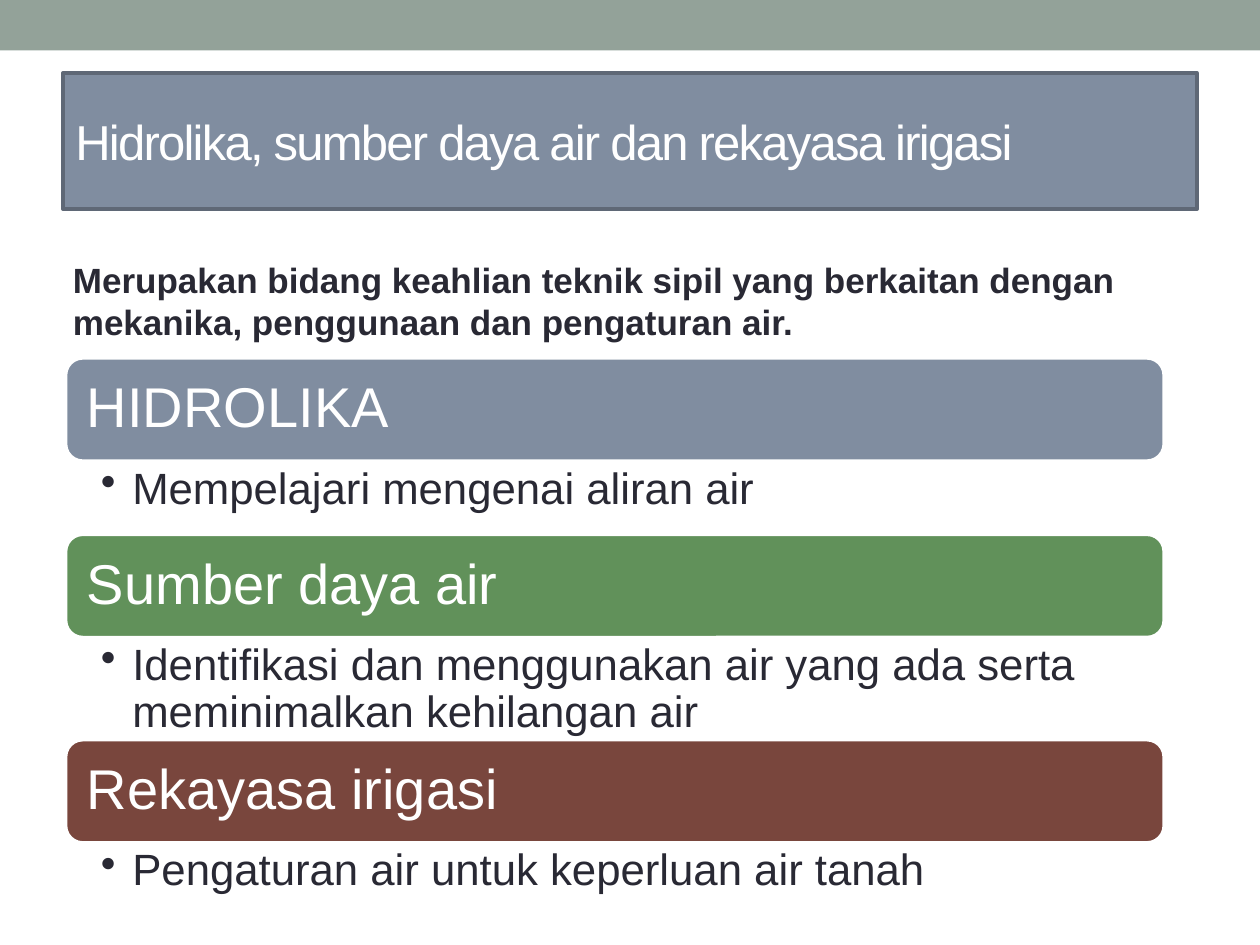
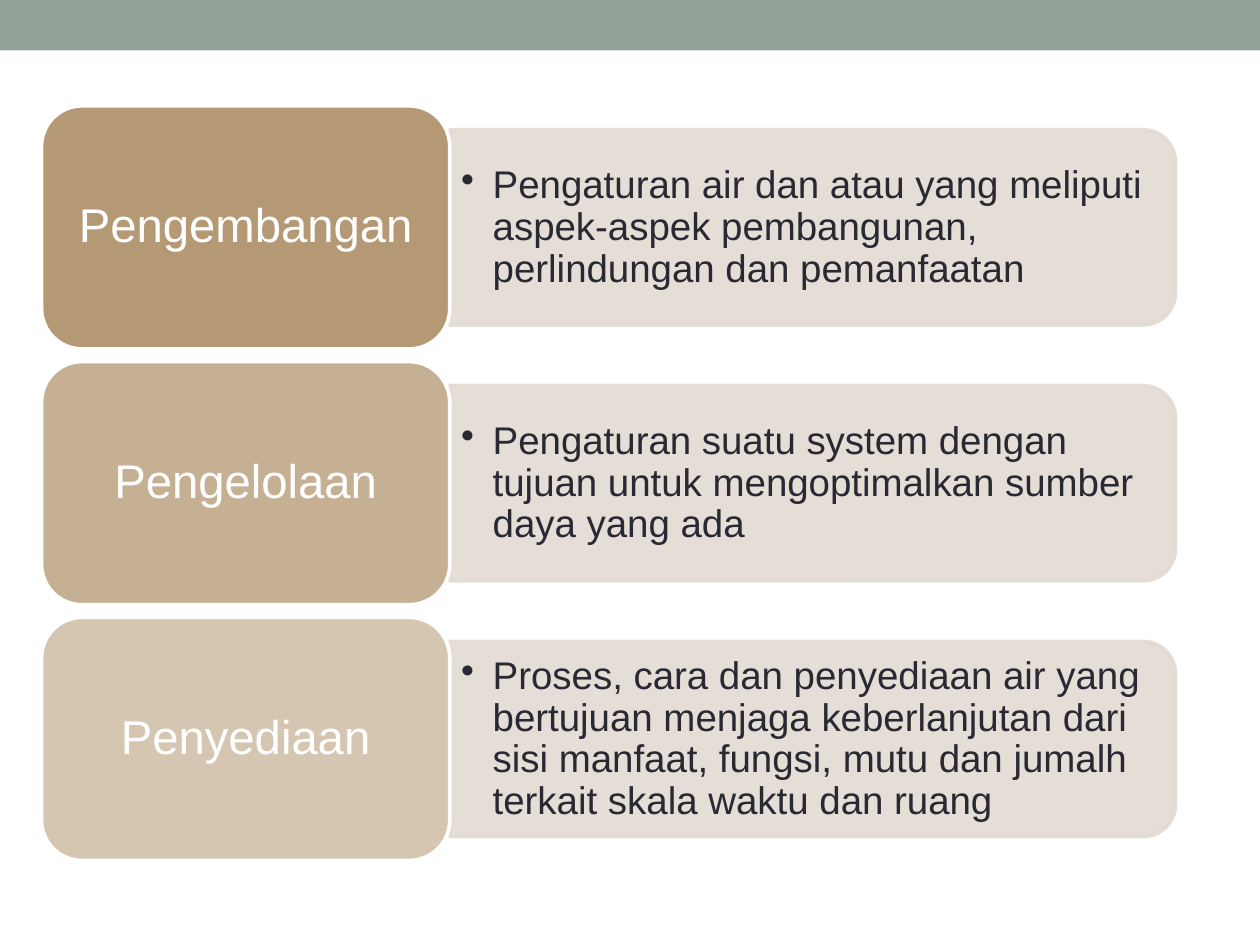
"""Builds two slides on hydraulics, water resources and irrigation engineering."""
import pptx
import pptx.dml.color
import pptx.enum.shapes
import pptx.enum.text
import pptx.oxml
import pptx.oxml.ns
import pptx.util
from lxml import etree

RGBColor = pptx.dml.color.RGBColor
SHAPE = pptx.enum.shapes.MSO_SHAPE
ANCHOR = pptx.enum.text.MSO_ANCHOR
ALIGN = pptx.enum.text.PP_ALIGN

WHITE = RGBColor(0xFF, 0xFF, 0xFF)
INK = RGBColor(0x29, 0x29, 0x34)
SAGE = RGBColor(0x93, 0xA2, 0x99)
SLATE = RGBColor(0x80, 0x8D, 0xA0)
SLATE_EDGE = RGBColor(0x5F, 0x68, 0x76)
GREEN = RGBColor(0x61, 0x91, 0x5A)
BROWN = RGBColor(0x79, 0x46, 0x3D)
TAN = RGBColor(0xAD, 0x8F, 0x67)
SAND = RGBColor(0xE3, 0xDB, 0xD3)

FIELDS = [
    ("HIDROLIKA", SLATE, "Mempelajari mengenai aliran air", 58),
    ("Sumber daya air", GREEN,
     "Identifikasi dan menggunakan air yang ada serta meminimalkan kehilangan air", 81),
    ("Rekayasa irigasi", BROWN, "Pengaturan air untuk keperluan air tanah", 58),
]
ACTIVITIES = [
    ("Pengembangan", 90,
     "Pengaturan air dan atau yang meliputi aspek-aspek pembangunan, "
     "perlindungan dan pemanfaatan"),
    ("Pengelolaan", 70,
     "Pengaturan suatu system dengan tujuan untuk mengoptimalkan sumber daya yang ada"),
    ("Penyediaan", 50,
     "Proses, cara dan penyediaan air yang bertujuan menjaga keberlanjutan dari "
     "sisi manfaat, fungsi, mutu dan jumalh terkait skala waktu dan ruang"),
]


def px(length):
    """Turn px into EMU, at 100 px to the inch."""
    return pptx.util.Emu(int(length * 9144))


def set_opacity(fill, percent):
    """Make a solid fill partly transparent."""
    color = fill._xPr.find(".//" + pptx.oxml.ns.qn("a:srgbClr"))
    etree.SubElement(color, pptx.oxml.ns.qn("a:alpha"), val=str(percent * 1000))


class SlideBuilder:
    """Holds the deck style and draws on the current page."""

    font_name = "Arial"
    line_width = pptx.util.Pt(2.08)

    def __init__(self):
        """Start an empty deck of 10 by 7.5 inches."""
        self.deck = pptx.Presentation()
        self.deck.slide_width, self.deck.slide_height = px(1000), px(750)
        self.page = None

    def new_page(self):
        """Add a blank page with the band along its top."""
        self.page = self.deck.slides.add_slide(self.deck.slide_layouts[6])
        self.shape(SHAPE.RECTANGLE, 0, 0, 1000, 40, SAGE)

    def shape(self, kind, left, top, width, height, color, edge=None, opacity=100):
        """Draw a filled preset shape."""
        box = self.page.shapes.add_shape(kind, px(left), px(top), px(width), px(height))
        box.shadow.inherit = False
        box.fill.solid()
        box.fill.fore_color.rgb = color
        if opacity < 100:
            set_opacity(box.fill, opacity)
        if edge is None:
            box.line.fill.background()
        else:
            box.line.color.rgb = edge
            box.line.width = self.line_width
        return box

    def label(self, box, text, size, color=WHITE, align=ALIGN.LEFT, anchor=ANCHOR.MIDDLE,
              insets=(10, 5, 10, 5), spacing=0.9, bold=False, bullet=False, tracking=0):
        """Put one styled paragraph into a box."""
        frame = box.text_frame
        frame.word_wrap = True
        frame.vertical_anchor = anchor
        (frame.margin_left, frame.margin_top,
         frame.margin_right, frame.margin_bottom) = map(px, insets)
        para = frame.paragraphs[0]
        span = para.add_run()
        span.text = text
        if tracking:
            span._r.get_or_add_rPr().set("spc", str(tracking * 100))
        if bullet:
            properties = para._p.get_or_add_pPr()
            properties.set("marL", str(px(25)))
            properties.set("indent", str(px(-25)))
            etree.SubElement(properties, pptx.oxml.ns.qn("a:buChar"), char="•")
        para.alignment = align
        para.line_spacing = spacing
        para.font.name = self.font_name
        para.font.size = pptx.util.Pt(size)
        para.font.bold = bold
        para.font.color.rgb = color

    def text(self, left, top, width, height, text, size, **style):
        """Add a text box in the ink colour."""
        box = self.page.shapes.add_textbox(px(left), px(top), px(width), px(height))
        self.label(box, text, size, INK, **style)

    def title(self, text):
        """Add the framed title bar."""
        bar = self.shape(SHAPE.RECTANGLE, 50, 58, 900, 108, SLATE, SLATE_EDGE)
        self.label(bar, text, 28, spacing=1.0, tracking=-1)

    def side_panel(self, left, top, width, height):
        """Draw a panel rounded on its right side only."""
        shift = (width - height) / 2
        panel = self.shape(SHAPE.ROUND_2_SAME_RECTANGLE, left + shift, top - shift,
                           height, width, SAND, SAND, 90)
        panel.rotation = 90
        set_opacity(panel.line.fill, 90)

    def draw_fields(self):
        """Draw the page of three fields."""
        self.new_page()
        self.title("Hidrolika, sumber daya air dan rekayasa irigasi")
        self.text(48, 200, 875, 77,
                  "Merupakan bidang keahlian teknik sipil yang berkaitan dengan "
                  "mekanika, penggunaan dan pengaturan air.",
                  20, anchor=ANCHOR.TOP, spacing=1.0, bold=True)
        top, bar_height = 284, 82
        for name, color, detail, detail_height in FIELDS:
            bar = self.shape(SHAPE.ROUNDED_RECTANGLE, 52, top, 872, bar_height, color, WHITE)
            self.label(bar, name, 32, insets=(13, 13, 13, 13))
            self.text(52, top + bar_height, 872, detail_height, detail, 25,
                      anchor=ANCHOR.TOP, insets=(28, 4, 25, 4), bullet=True)
            top += bar_height + detail_height

    def draw_activities(self):
        """Draw the page of three activities."""
        self.new_page()
        for row, (name, opacity, detail) in enumerate(ACTIVITIES):
            top = 84 + 203 * row
            self.side_panel(357, top + 19, 576, 155)
            self.text(357, top + 27, 568, 140, detail, 22,
                      insets=(9, 5, 9, 5), bullet=True)
            tile = self.shape(SHAPE.ROUNDED_RECTANGLE, 33, top, 324, 193, TAN, WHITE, opacity)
            self.label(tile, name, 27, align=ALIGN.CENTER, insets=(11, 6, 11, 6))


def main():
    """Build and save the deck."""
    builder = SlideBuilder()
    builder.draw_fields()
    builder.draw_activities()
    builder.deck.save("out.pptx")


if __name__ == "__main__":
    main()
